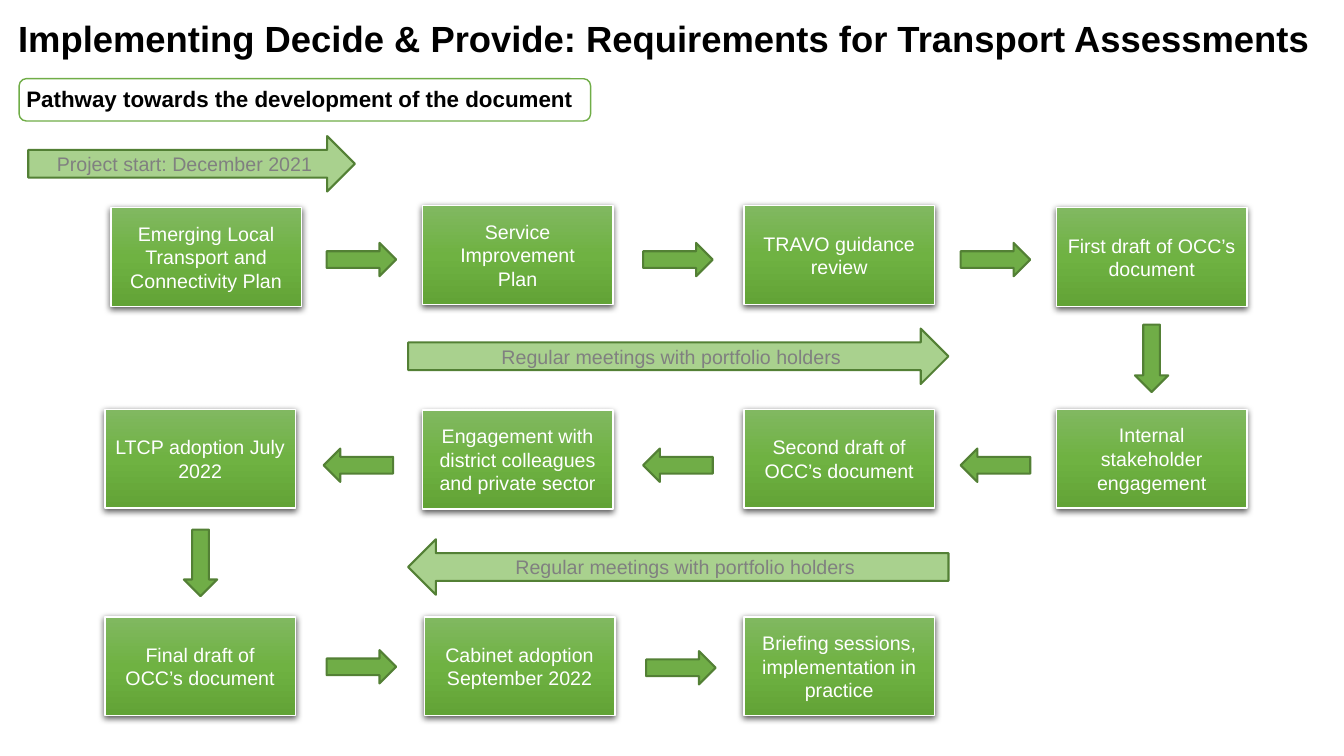
from lxml import etree
from pptx import Presentation
from pptx.dml.color import RGBColor
from pptx.enum.shapes import MSO_SHAPE
from pptx.enum.text import MSO_ANCHOR, MSO_AUTO_SIZE, PP_ALIGN
from pptx.oxml.ns import qn
from pptx.util import Pt

RECTANGLE = MSO_SHAPE.RECTANGLE
ROUNDED = MSO_SHAPE.ROUNDED_RECTANGLE
RIGHT_ARROW = MSO_SHAPE.RIGHT_ARROW
LEFT_ARROW = MSO_SHAPE.LEFT_ARROW
CENTER, LEFT, JUSTIFY = PP_ALIGN.CENTER, PP_ALIGN.LEFT, PP_ALIGN.JUSTIFY
MIDDLE = MSO_ANCHOR.MIDDLE
GROW = MSO_AUTO_SIZE.SHAPE_TO_FIT_TEXT

COLORS = {
    "white": "FFFFFF", "black": "000000", "gray": "808080",
    "green": "70AD47", "dark": "538035", "pale": "A9D18E",
    "top": "81B861", "middle": "6FB242", "bottom": "62A336",
}
FONT = "Arial"
STEP_SIZE = (136.1, 70.6)
ARROW_SIZE = (49.7, 23.8)
BANNER_HEIGHT = 39.6


def color(name):
    return RGBColor.from_string(COLORS[name])


def write(shape, paragraphs, size, color_name, align, bold=False):
    frame = shape.text_frame
    for index, text in enumerate(paragraphs):
        paragraph = frame.paragraphs[0] if index == 0 else frame.add_paragraph()
        paragraph.alignment = align
        run = paragraph.add_run()
        run.text = text
        run.font.name = FONT
        run.font.size = Pt(size)
        run.font.bold = bold
        run.font.color.rgb = color(color_name)


def add_block(slide, kind, box, fill, line, line_width):
    shape = slide.shapes.add_shape(kind, *map(Pt, box))
    shape.shadow.inherit = False
    shape.fill.solid()
    shape.fill.fore_color.rgb = color(fill)
    shape.line.color.rgb = color(line)
    shape.line.width = Pt(line_width)
    shape.text_frame.word_wrap = True
    shape.text_frame.vertical_anchor = MIDDLE
    return shape


def add_color(parent, name):
    return etree.SubElement(parent, qn("a:srgbClr"), val=COLORS[name])


def shade(shape):
    shape.fill.gradient()
    shape.fill.gradient_angle = 270
    properties = shape._element.spPr
    stops = properties.find(qn("a:gradFill")).find(qn("a:gsLst"))
    for stop in list(stops):
        stops.remove(stop)
    for position, name in ((0, "top"), (50000, "middle"), (100000, "bottom")):
        add_color(etree.SubElement(stops, qn("a:gs"), pos=str(position)), name)
    shadow = etree.SubElement(
        properties.find(qn("a:effectLst")), qn("a:outerShdw"),
        blurRad=str(Pt(4.5)), dist=str(Pt(1.5)), dir="5400000",
        algn="ctr", rotWithShape="0")
    etree.SubElement(add_color(shadow, "black"), qn("a:alpha"), val="63000")


def draw_step(slide, left, top, paragraphs):
    shape = add_block(slide, RECTANGLE, (left, top, *STEP_SIZE), "middle", "white", 1)
    shade(shape)
    write(shape, paragraphs, 14, "white", CENTER)


def draw_arrow(slide, left, top, rotation=0, length=ARROW_SIZE[0]):
    box = (left, top, length, ARROW_SIZE[1])
    shape = add_block(slide, RIGHT_ARROW, box, "green", "dark", 1.5)
    shape.rotation = rotation


def draw_row(slide, steps, arrows, rotation):
    for step in steps:
        draw_step(slide, *step)
    for left, top in arrows:
        draw_arrow(slide, left, top, rotation)


def draw_banner(slide, kind, left, top, width, text):
    box = (left, top, width, BANNER_HEIGHT)
    shape = add_block(slide, kind, box, "pale", "dark", 1.5)
    write(shape, [text], 14, "gray", CENTER)


def draw_heading(slide, box, text, size, align, wrap):
    shape = slide.shapes.add_textbox(*map(Pt, box))
    shape.text_frame.word_wrap = wrap
    shape.text_frame.auto_size = GROW
    write(shape, [text], size, "black", align, True)


def draw_subtitle(slide, left, top, width, height, text):
    add_block(slide, ROUNDED, (left, top, width, height), "white", "green", 1)
    draw_heading(slide, (left - 2, top + 1.4, width + 2, 26.6), text, 16, JUSTIFY, True)


def main():
    presentation = Presentation()
    presentation.slide_width, presentation.slide_height = Pt(960), Pt(540)
    slide = presentation.slides.add_slide(presentation.slide_layouts[6])

    draw_row(slide, [
        (79.2, 148.3, ["Emerging Local Transport and Connectivity Plan"]),
        (301.7, 146.9, ["Service Improvement", "Plan"]),
        (531.4, 146.9, ["TRAVO guidance review"]),
        (754.6, 148.3, ["First draft of OCC’s document"]),
    ], [(233.3, 173.5), (459.4, 173.5), (686.2, 173.5)], 0)
    draw_arrow(slide, 798.5, 244.1, 90, 48.2)
    draw_row(slide, [
        (754.6, 292.3, ["Internal stakeholder engagement"]),
        (531.4, 292.3, ["Second draft of OCC’s document"]),
        (301.7, 293, ["Engagement with district colleagues and private sector"]),
        (74.9, 292.3, ["LTCP adoption July 2022"]),
    ], [(686.2, 320.4), (459.4, 320.4), (231.1, 320.4)], 180)
    draw_arrow(slide, 119.5, 390.2, 90, 47.5)
    draw_row(slide, [
        (74.9, 440.6, ["Final draft of OCC’s document"]),
        (303.1, 440.6, ["Cabinet adoption September 2022"]),
        (531.4, 440.6, ["Briefing sessions, implementation in practice"]),
    ], [(233.3, 464.4), (461.5, 465.1)], 0)

    meetings = "Regular meetings with portfolio holders"
    draw_banner(slide, RIGHT_ARROW, 291.6, 234.7, 385.9, meetings)
    draw_banner(slide, LEFT_ARROW, 291.6, 385.2, 385.9, meetings)
    draw_banner(slide, RIGHT_ARROW, 20.2, 97.2, 233.3, "Project start: December 2021")

    draw_heading(
        slide, (5.8, 7.9, 954, 38.9),
        "Implementing Decide & Provide: Requirements for Transport Assessments",
        26, LEFT, False)
    draw_subtitle(slide, 13.7, 56.2, 408.2, 30.2,
                  "Pathway towards the development of the document")
    presentation.save("out.pptx")


if __name__ == "__main__":
    main()
